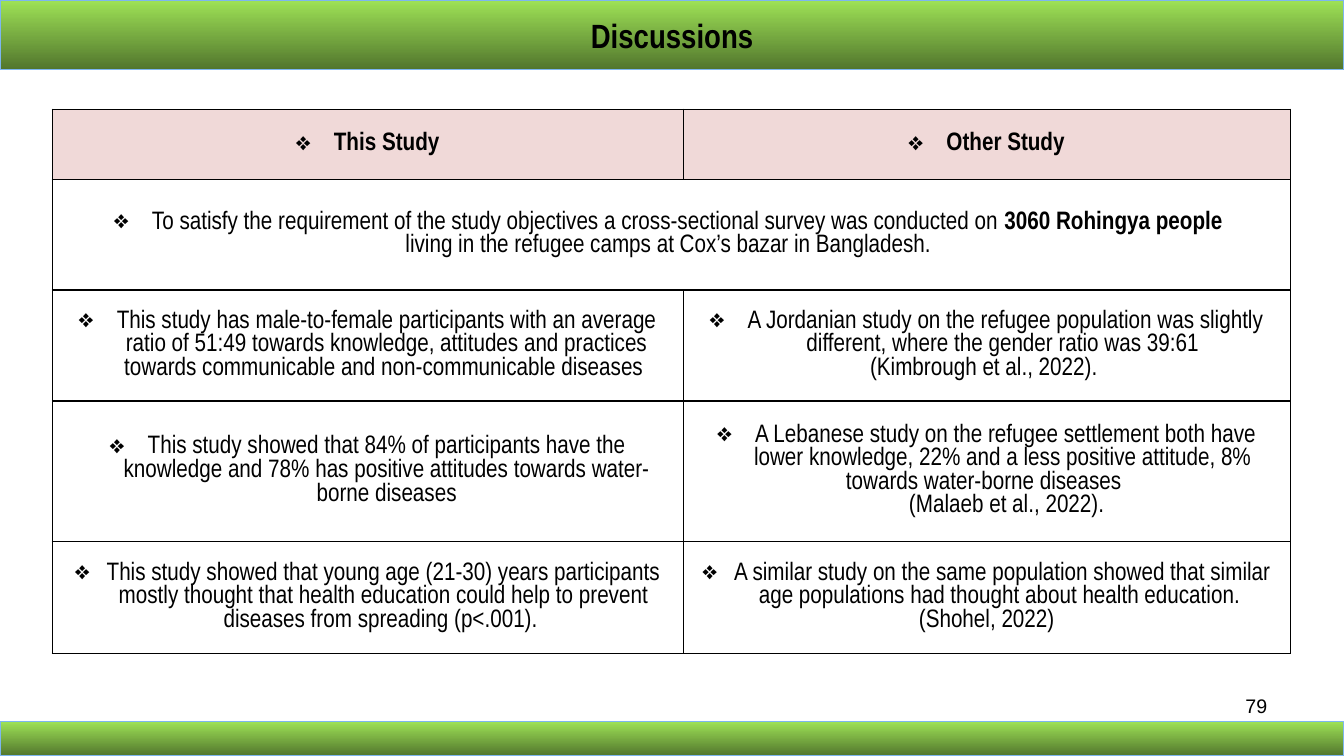
from pptx import Presentation
from pptx.dml.color import RGBColor
from pptx.enum.shapes import MSO_SHAPE
from pptx.enum.text import MSO_ANCHOR, PP_ALIGN
from pptx.oxml import parse_xml
from pptx.oxml.ns import nsdecls
from pptx.util import Pt

INK = {"text": "000000", "head": "F0D9D8", "cell": "FFFFFF",
       "light": "9EE256", "dark": "52762D", "edge": "7DB6EF"}


def style(run, size, bold=False, face="Arial Narrow"):
    run.font.size = Pt(size)
    run.font.name = face
    run.font.bold = bold
    run.font.color.rgb = RGBColor.from_string(INK["text"])


def indent(para, left, bullet):
    """Indent a paragraph, hanging a diamond bullet in the gap if asked."""
    props = para._p.get_or_add_pPr()
    props.set("marL", str(Pt(left)))
    props.set("indent", str(Pt(-left if bullet else 0)))
    if bullet:
        props.append(parse_xml(f'<a:buChar {nsdecls("a")} char="❖"/>'))


deck = Presentation()
deck.slide_width, deck.slide_height = Pt(960), Pt(540)
slide = deck.slides.add_slide(deck.slide_layouts[6])
shapes = slide.shapes

# Each cell is a list of paragraphs; asterisks enclose bold text.
rows = [
    [["*This Study*"], ["*Other Study*"]],
    [["To satisfy the requirement of the study objectives a cross-sectional "
      "survey was conducted on *3060 Rohingya people *",
      "living in the refugee camps at Cox’s bazar in Bangladesh. "]],
    [["This study has male-to-female participants with an average ratio of "
      "51:49 towards knowledge, attitudes and practices towards communicable "
      "and non-communicable diseases "],
     ["A Jordanian study on the refugee population was slightly different, "
      "where the gender ratio was 39:61 ",
      "(Kimbrough et al., 2022). "]],
    [["This study showed that 84% of participants have the knowledge and 78% "
      "has positive attitudes towards water-borne diseases"],
     ["A Lebanese study on the refugee settlement both have lower knowledge, "
      "22% and a less positive attitude, 8% ",
      "towards water-borne diseases ",
      "(Malaeb et al., 2022)."]],
    [["This study showed that young age (21-30) years participants mostly "
      "thought that health education could help to prevent diseases from "
      "spreading (p<.001). "],
     ["A similar study on the same population showed that similar age "
      "populations had thought about health education. ",
      "(Shohel, 2022)"]],
]
widths = [450.6, 433.6]
heights = [50, 79.2, 79.2, 100.2, 80.4]

frame = shapes.add_table(len(rows), len(widths), Pt(37.4), Pt(78),
                         Pt(sum(widths)), Pt(sum(heights)))
table = frame.table
for col, width in zip(table.columns, widths):
    col.width = Pt(width)
for row, height in zip(table.rows, heights):
    row.height = Pt(height)
table.cell(1, 0).merge(table.cell(1, 1))

for cell in table.iter_cells():
    props = cell._tc.get_or_add_tcPr()
    for side in ("lnL", "lnR", "lnT", "lnB"):
        props.append(parse_xml(
            f'<a:{side} {nsdecls("a")} w="{Pt(1)}"><a:solidFill>'
            f'<a:srgbClr val="{INK["text"]}"/></a:solidFill></a:{side}>'))

for r, row in enumerate(rows):
    for c, paras in enumerate(row):
        cell = table.cell(r, c)
        cell.vertical_anchor = MSO_ANCHOR.MIDDLE
        cell.fill.solid()
        cell.fill.fore_color.rgb = RGBColor.from_string(INK["cell" if r else "head"])
        for n, text in enumerate(paras):
            para = cell.text_frame.paragraphs[0] if n == 0 else cell.text_frame.add_paragraph()
            para.alignment = PP_ALIGN.CENTER
            para.line_spacing = Pt(16.9)
            if n == 0:
                indent(para, 22.5 if r == 4 else 27, True)
            elif n == 2:
                indent(para, 28.5, False)
            for k, part in enumerate(text.split("*")):
                if part:
                    run = para.add_run()
                    run.text = part
                    style(run, 18, k % 2 == 1)

for top, height, title in [(0, 49.7, "Discussions"), (515.5, 24.5, "")]:
    bar = shapes.add_shape(MSO_SHAPE.RECTANGLE, 0, Pt(top), Pt(960), Pt(height))
    bar.shadow.inherit = False
    bar.fill.gradient()
    bar.fill.gradient_angle = 270
    for stop, name, place in zip(bar.fill.gradient_stops, ("light", "dark"), (0, 1)):
        stop.color.rgb = RGBColor.from_string(INK[name])
        stop.position = place
    bar.line.color.rgb = RGBColor.from_string(INK["edge"])
    bar.line.width = Pt(0.75)
    if title:
        bar.text_frame.text = title
        bar.text_frame.word_wrap = False
        bar.text_frame.vertical_anchor = MSO_ANCHOR.MIDDLE
        para = bar.text_frame.paragraphs[0]
        para.alignment = PP_ALIGN.CENTER
        style(para.runs[0], 24, True)

page = shapes.add_textbox(Pt(688.3), Pt(491.8), Pt(224), Pt(37.4))
page.text_frame.word_wrap = True
page.text_frame.text = "79"
para = page.text_frame.paragraphs[0]
para.alignment = PP_ALIGN.RIGHT
style(para.runs[0], 14, face="Arial")

deck.save("out.pptx")
